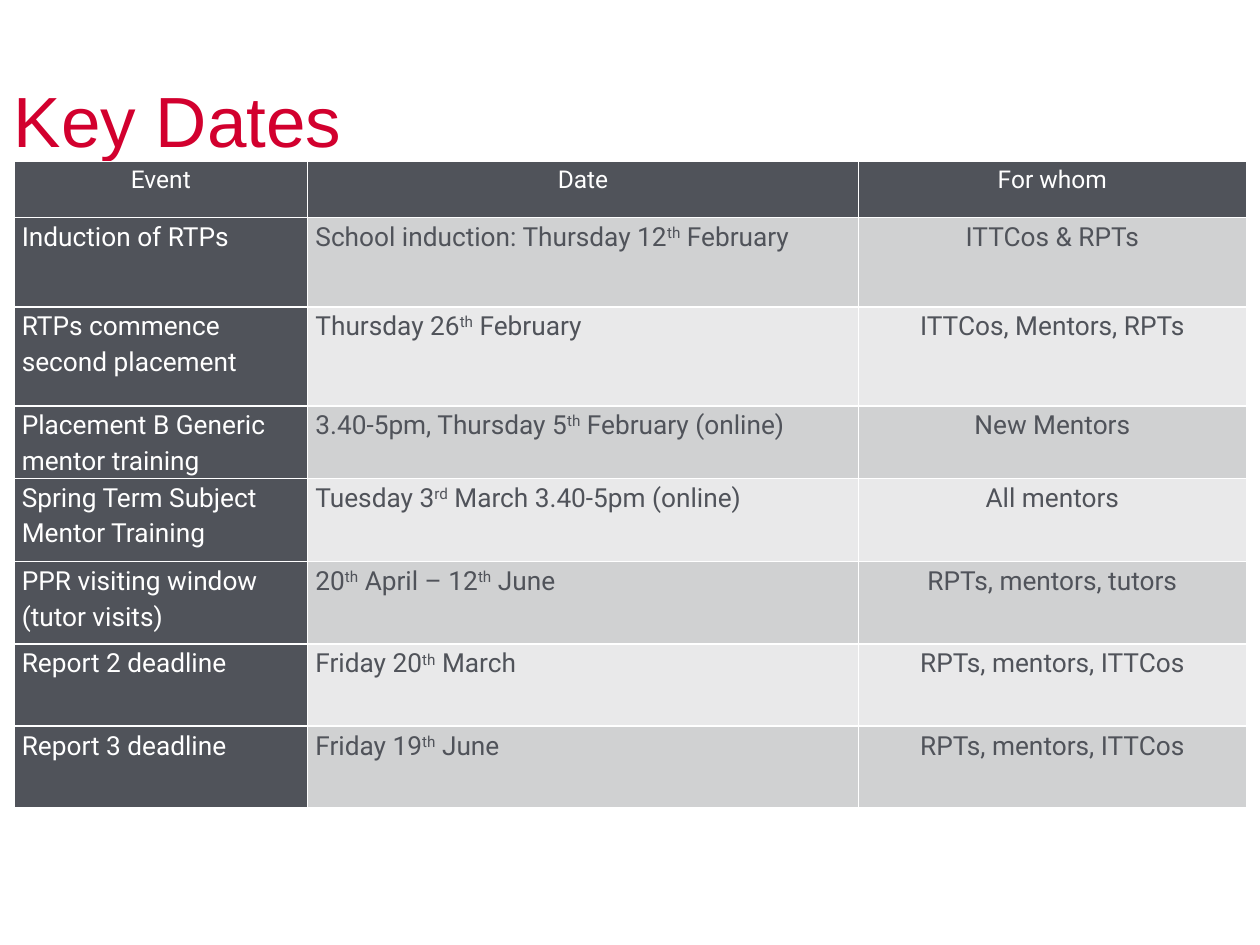
import dataclasses

import pptx
import pptx.dml.color
import pptx.enum.text
import pptx.oxml
import pptx.oxml.ns
import pptx.util

Pt = pptx.util.Pt
Align = pptx.enum.text.PP_ALIGN


@dataclasses.dataclass(frozen=True)
class Theme:
    red: str = "D2002E"
    slate: str = "50535A"
    white: str = "FFFFFF"
    bands: tuple = ("D0D1D2", "E9E9EA")
    title_font: str = "Arial"
    table_font: str = "Roboto"
    title_size: float = 40.6
    header_size: float = 14
    body_size: float = 15
    line_spacing: float = 1.15
    cell_inset: float = 4.5
    border_width: float = 1


HEADERS = ["Event", "Date", "For whom"]
# Text between carets is superscript.
KEY_DATES = [
    ["Induction of RTPs", "School induction: Thursday 12^th^ February", "ITTCos & RPTs"],
    ["RTPs commence second placement", "Thursday 26^th^ February", "ITTCos, Mentors, RPTs"],
    ["Placement B Generic mentor training", "3.40-5pm, Thursday 5^th^ February (online)",
     "New Mentors"],
    ["Spring Term Subject Mentor Training", "Tuesday 3^rd^ March 3.40-5pm (online)",
     "All mentors"],
    ["PPR visiting window (tutor visits)", "20^th^ April – 12^th^ June",
     "RPTs, mentors, tutors"],
    ["Report 2 deadline", "Friday 20^th^ March", "RPTs, mentors, ITTCos"],
    ["Report 3 deadline", "Friday 19^th^ June", "RPTs, mentors, ITTCos"],
]
COLUMN_WIDTHS = [167.8, 314.8, 221.6]
ROW_HEIGHTS = [32, 51, 56.5, 40.5, 47.7, 47, 47, 46.5]


class SlideBuilder:
    def __init__(self, prs, theme):
        self.theme = theme
        self.s = prs.slides.add_slide(prs.slide_layouts[6])

    def add_runs(self, p, text, font, size, color):
        """Add text to p, raising the parts between carets."""
        for i, part in enumerate(text.split("^")):
            r = p.add_run()
            r.text = part
            r.font.name = font
            r.font.size = Pt(size)
            r.font.color.rgb = pptx.dml.color.RGBColor.from_string(color)
            if i % 2:
                r._r.get_or_add_rPr().set("baseline", "30000")

    def title(self, text, left, top, width, height):
        sp = self.s.shapes.add_textbox(Pt(left), Pt(top), Pt(width), Pt(height))
        tf = sp.text_frame
        tf.word_wrap = False
        tf.vertical_anchor = pptx.enum.text.MSO_ANCHOR.BOTTOM
        tf.margin_left = tf.margin_right = tf.margin_top = tf.margin_bottom = 0
        p = tf.paragraphs[0]
        p.alignment = Align.LEFT
        t = self.theme
        self.add_runs(p, text, t.title_font, t.title_size, t.red)

    def borders(self, cell):
        tc_pr = cell._tc.get_or_add_tcPr()
        for side in "LRTB":
            tc_pr.append(pptx.oxml.parse_xml(
                f'<a:ln{side} {pptx.oxml.ns.nsdecls("a")} w="{Pt(self.theme.border_width)}">'
                f'<a:solidFill><a:srgbClr val="{self.theme.white}"/></a:solidFill>'
                f'</a:ln{side}>'))

    def cell(self, cell, text, size, color, fill, alignment):
        t = self.theme
        cell.margin_left = cell.margin_right = Pt(t.cell_inset)
        cell.margin_top = cell.margin_bottom = 0
        self.borders(cell)
        cell.fill.solid()
        cell.fill.fore_color.rgb = pptx.dml.color.RGBColor.from_string(fill)
        p = cell.text_frame.paragraphs[0]
        p.alignment = alignment
        p.line_spacing = t.line_spacing
        self.add_runs(p, text, t.table_font, size, color)

    def table(self, rows, left, top, widths, heights):
        t = self.theme
        table = self.s.shapes.add_table(
            len(rows), len(widths), Pt(left), Pt(top),
            Pt(sum(widths)), Pt(sum(heights))).table
        table.first_col = True
        for column, width in zip(table.columns, widths):
            column.width = Pt(width)
        for i, (row, height) in enumerate(zip(rows, heights)):
            table.rows[i].height = Pt(height)
            for j, text in enumerate(row):
                is_header = i == 0
                is_dark = is_header or j == 0
                self.cell(
                    table.cell(i, j), text,
                    t.header_size if is_header else t.body_size,
                    t.white if is_dark else t.slate,
                    t.slate if is_dark else t.bands[(i - 1) % 2],
                    Align.CENTER if is_header or j == 2 else Align.LEFT)


def main():
    prs = pptx.Presentation()
    prs.slide_width, prs.slide_height = Pt(720), Pt(540)
    slide = SlideBuilder(prs, Theme())
    slide.title("Key Dates", 8, 47, 620.6, 45.4)
    slide.table([HEADERS] + KEY_DATES, 8, 92.4, COLUMN_WIDTHS, ROW_HEIGHTS)
    prs.save("out.pptx")


if __name__ == "__main__":
    main()
